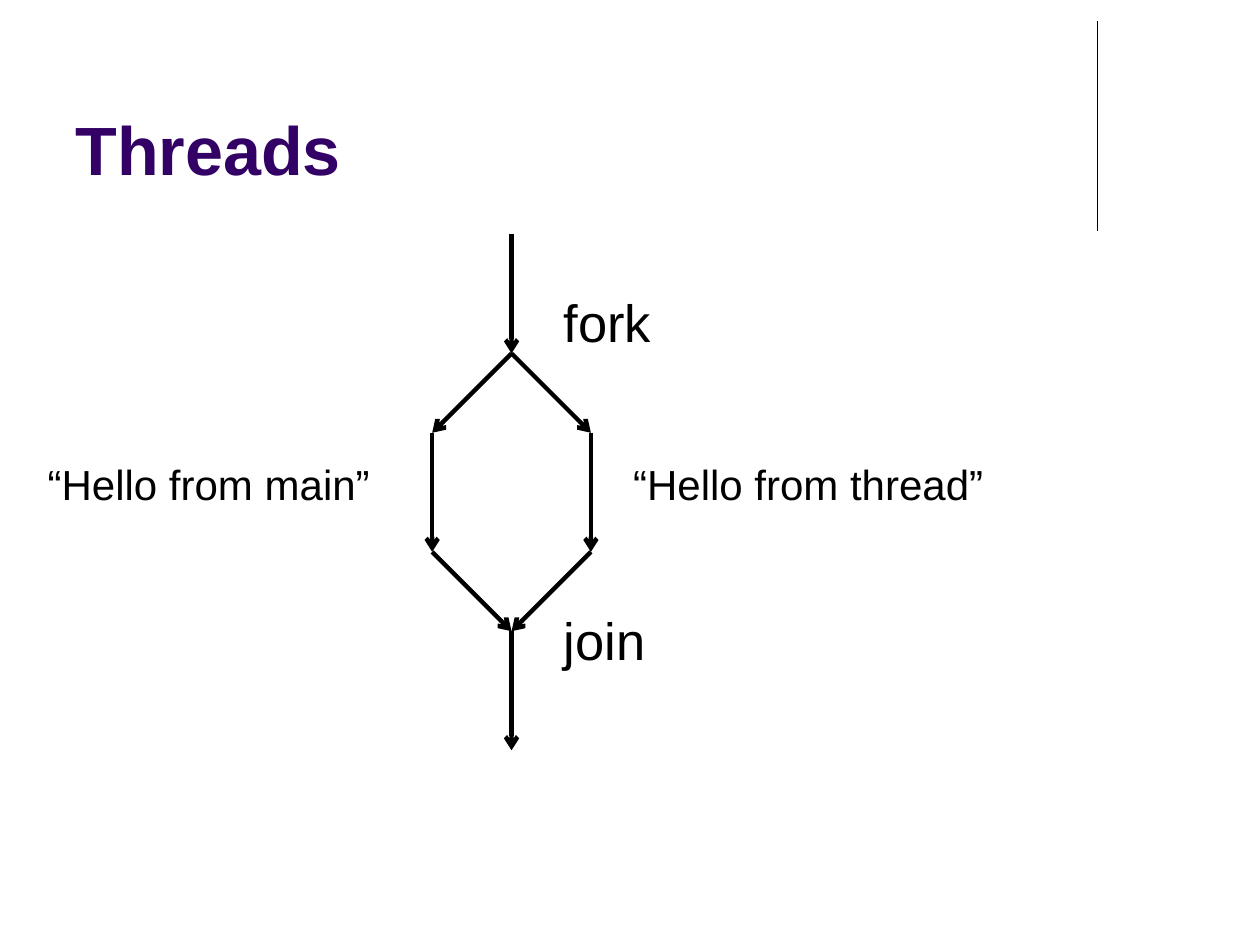
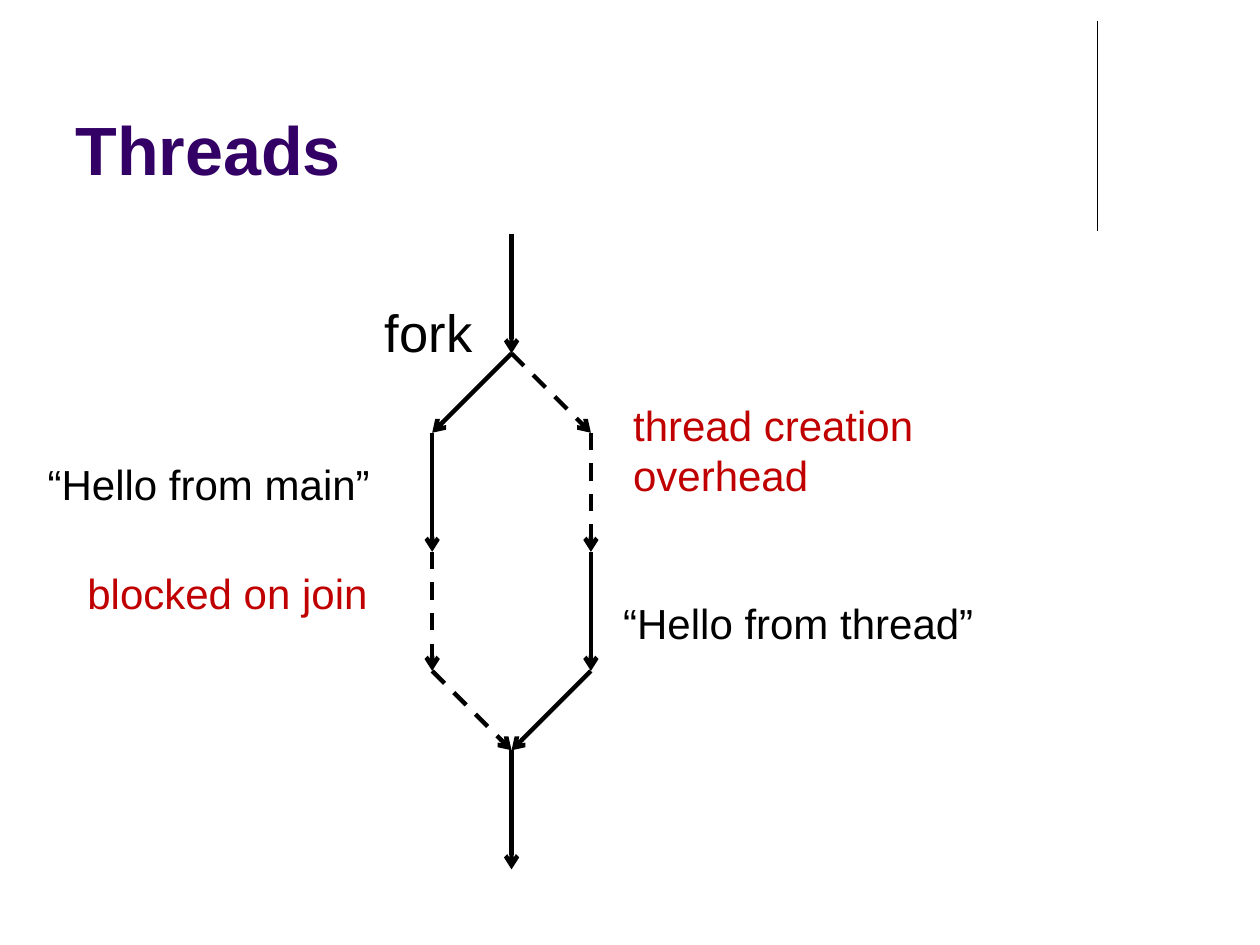
from itertools import pairwise

from lxml import etree
from pptx import Presentation
from pptx import util as u
from pptx.dml.color import RGBColor
from pptx.enum import dml, shapes, text
from pptx.oxml.ns import qn

COLORS = {"title": "330066", "ink": "000000", "overhead": "C00000"}
FONT = "Arial"
TITLE_ONLY = 5

# Diagram grid: x counts from the centre line, y from the top arrow's start
CENTRE, TOP, UNIT = 4.06, 1.86, 0.315
STEP, SLANT = 3, 2  # rows of a vertical arrow, rows and columns of a diagonal
SOLID, DASHED = False, True


def set_font(p, size, color, bold=False):
    p.font.name = FONT
    p.font.size = u.Pt(size)
    p.font.bold = bold
    p.font.color.rgb = RGBColor.from_string(COLORS[color])


def add_line(s, start, end, width):
    line = s.shapes.add_connector(
        shapes.MSO_CONNECTOR.STRAIGHT, *(u.Inches(v) for v in (*start, *end)))
    line.line.color.rgb = RGBColor.from_string(COLORS["ink"])
    line.line.width = u.Pt(width)
    etree.SubElement(line._element.spPr, qn("a:effectLst"))
    return line


def grid(x, y):
    return CENTRE + x * UNIT, TOP + y * UNIT


def add_arrow(s, start, end, dashed=SOLID):
    line = add_line(s, grid(*start), grid(*end), 2.5)
    if dashed:
        line.line.dash_style = dml.MSO_LINE.DASH
    etree.SubElement(line.line._get_or_add_ln(), qn("a:tailEnd"), type="arrow")


def add_label(s, words, x, y, cols, size=24, color="ink", rows=1.6):
    left, top = grid(x, y)
    box = s.shapes.add_textbox(
        *(u.Inches(v) for v in (left, top, cols * UNIT, rows * UNIT)))
    tf = box.text_frame
    tf.word_wrap = True
    tf.auto_size = text.MSO_AUTO_SIZE.SHAPE_TO_FIT_TEXT
    tf.text = words
    set_font(tf.paragraphs[0], size, color)


def add_branch(s, side, styles):
    """Draw one thread from fork to join, one line style per arrow."""
    x, y = side * SLANT, STEP + SLANT
    points = [(0, STEP), (x, y)]
    for _ in styles[1:-1]:
        y += STEP
        points.append((x, y))
    points.append((0, y + SLANT))
    for (start, end), dashed in zip(pairwise(points), styles):
        add_arrow(s, start, end, dashed)
    return points[-1]


def add_fork_join(s, main, thread):
    add_arrow(s, (0, 0), (0, STEP))
    add_branch(s, -1, main)
    x, y = add_branch(s, 1, thread)
    add_arrow(s, (x, y), (x, y + STEP))


def add_threads_slide(prs, main, thread, labels):
    s = prs.slides.add_slide(prs.slide_layouts[TITLE_ONLY])
    # Rule at the upper right
    add_line(s, (8.71, 0.17), (8.71, 1.83), 0.75)
    # Title
    title = s.shapes.title
    title.left, title.top = u.Inches(0.5), u.Inches(0.13)
    title.width, title.height = u.Inches(8.25), u.Inches(1.42)
    tf = title.text_frame
    tf.text = "Threads"
    tf.vertical_anchor = text.MSO_ANCHOR.BOTTOM
    p = tf.paragraphs[0]
    p.alignment = text.PP_ALIGN.LEFT
    set_font(p, 39, "title", bold=True)
    # Diagram and its labels
    add_fork_join(s, main, thread)
    for label in labels:
        add_label(s, **label)


def main():
    prs = Presentation()
    prs.slide_width, prs.slide_height = u.Inches(10), u.Inches(7.5)

    event = dict(cols=3.25, size=30, rows=1.95)
    note = dict(cols=8.25, color="overhead")
    hello_main = dict(words="“Hello from main”", x=-12, y=5.5, cols=9)
    hello_thread = dict(words="“Hello from thread”", cols=9.5)

    # Ideal fork and join
    add_threads_slide(prs, [SOLID] * 3, [SOLID] * 3, [
        dict(words="fork", x=1, y=1.25, **event),
        dict(words="join", x=1, y=9.25, **event),
        hello_main,
        dict(x=2.75, y=5.5, **hello_thread),
    ])

    # Fork and join with waiting time dashed
    add_threads_slide(
        prs, [SOLID, SOLID, DASHED, DASHED], [DASHED, DASHED, SOLID, SOLID], [
            dict(words="fork", x=-3.5, y=1.5, **event),
            dict(words="blocked on join", x=-11, y=8.25, **note),
            hello_main,
            dict(x=2.5, y=9, **hello_thread),
            dict(words="thread creation overhead", x=2.75, y=4, rows=2.9, **note),
        ])

    prs.save("out.pptx")


if __name__ == "__main__":
    main()
